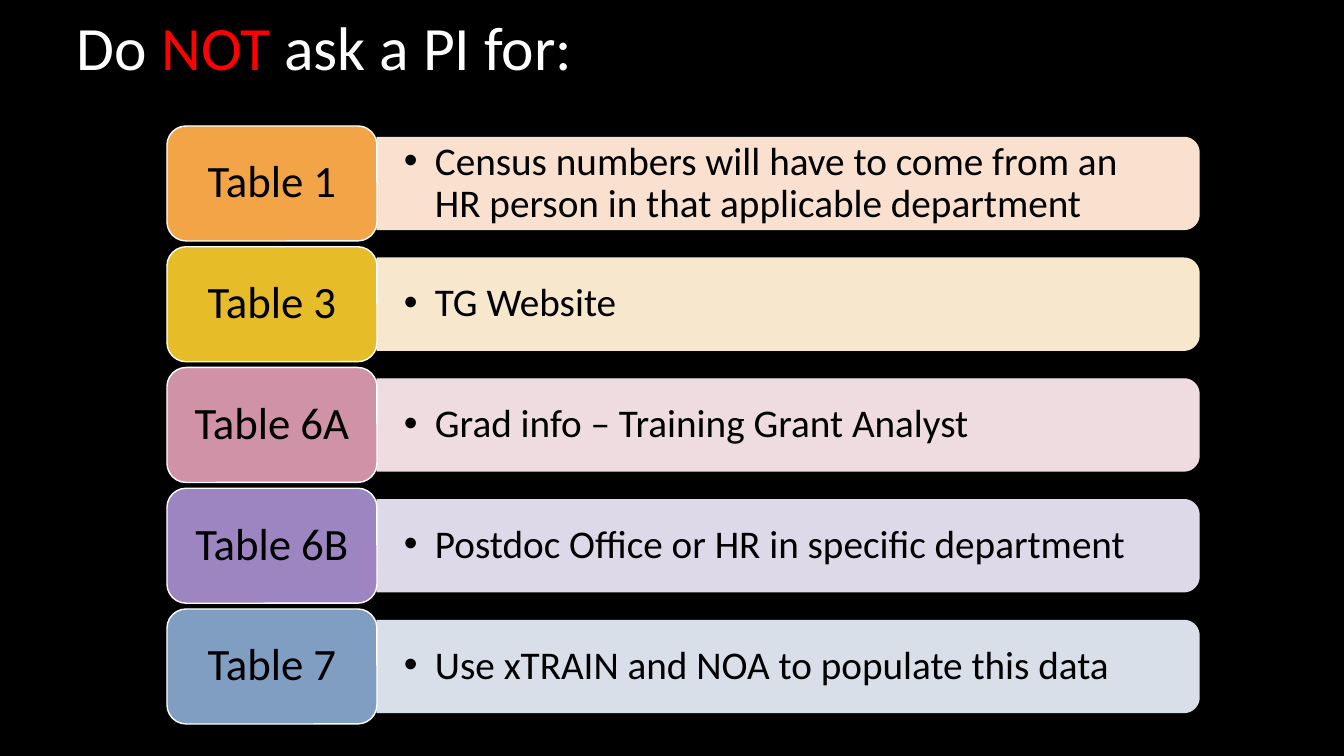
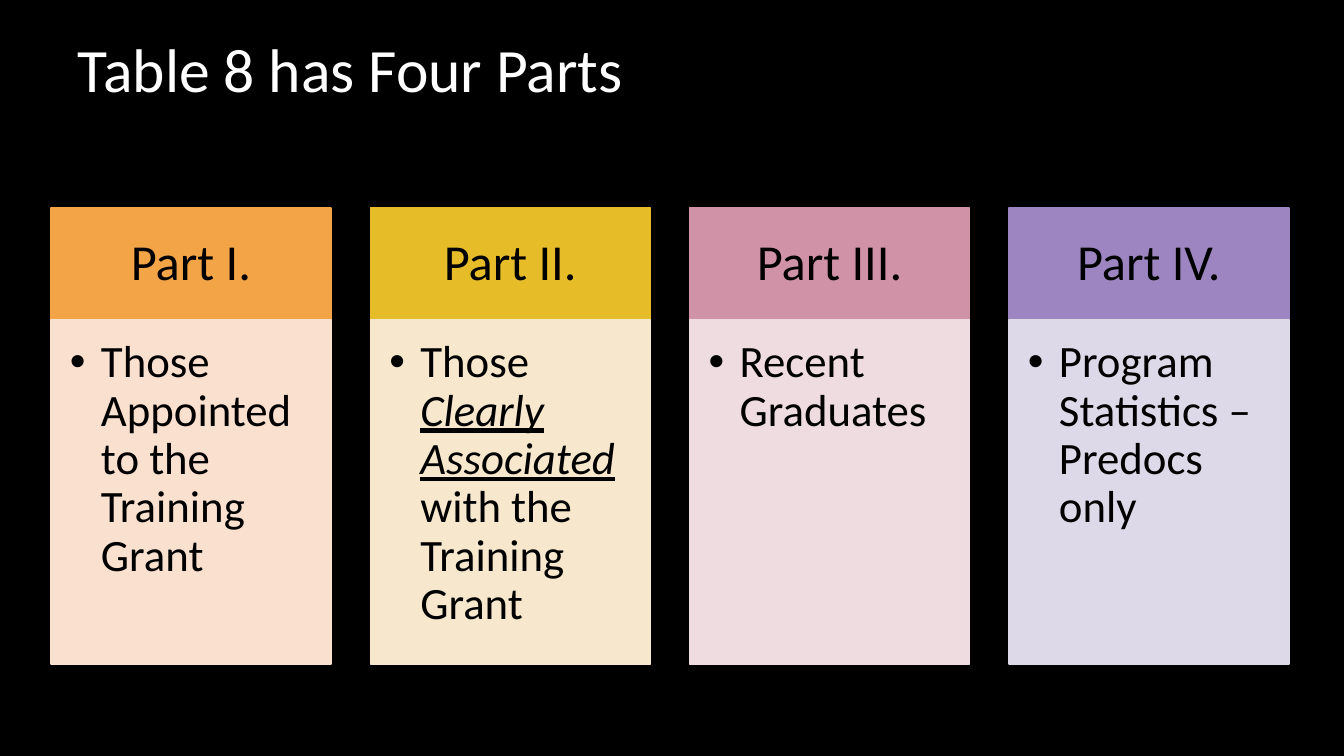
"""Build two training grant slides: tables not to ask a PI for, and the parts of Table 8."""
import math

from lxml import etree
from pptx import Presentation, util as u
from pptx.dml.color import RGBColor
from pptx.enum import shapes, text
from pptx.oxml.ns import qn

PX = 12192000 / 1344
FONT = "Calibri"
BLACK, WHITE, RED = "000000", "FFFFFF", "FF0000"
ACCENTS = [
    ("F3A447", "FAE0CF"),
    ("E7BC29", "F6E7CD"),
    ("D092A7", "EEDCE1"),
    ("9C85C0", "DED9E8"),
    ("809EC2", "D8DFE9"),
]

AVOID_TITLE = [("Do ", {}), ("NOT", {"color": RED}), (" ask a PI for:", {})]
SOURCES = [
    ("Table 1", "Census numbers will have to come from an HR person in that applicable department"),
    ("Table 3", "TG Website"),
    ("Table 6A", "Grad info – Training Grant Analyst"),
    ("Table 6B", "Postdoc Office or HR in specific department"),
    ("Table 7", "Use xTRAIN and NOA to populate this data"),
]
PARTS_TITLE = [("Table 8 has Four Parts", {})]
PARTS = [
    ("Part I.", [("Those Appointed to the Training Grant", {})]),
    ("Part II.", [("Those ", {}),
                  ("Clearly Associated", {"italic": True, "underline": True}),
                  (" with the Training Grant", {})]),
    ("Part III.", [("Recent Graduates", {})]),
    ("Part IV.", [("Program Statistics – Predocs only", {})]),
]

TITLE = {"size": 44, "color": WHITE, "insets": (10, 5, 10, 5)}
LABEL = {"size": 32, "insets": (19, 12, 19, 12), "align": text.PP_ALIGN.CENTER}
PANEL = {"size": 28, "insets": (27, 18, 32, 18), "bullet": True}
HEADING = {"size": 36, "insets": (28, 16, 28, 16), "align": text.PP_ALIGN.CENTER}
DETAIL = {"size": 32, "insets": (19, 19, 25, 28), "bullet": True,
          "anchor": text.MSO_ANCHOR.TOP}


def px(length):
    return u.Emu(round(length * PX))


def rgb(value):
    return RGBColor.from_string(value)


def add_bullet(paragraph):
    props = paragraph._p.get_or_add_pPr()
    props.set("marL", str(px(31)))
    props.set("indent", str(-px(31)))
    etree.SubElement(props, qn("a:buFont"), typeface="Arial")
    etree.SubElement(props, qn("a:buChar"), char="•")


def write(shape, runs, size, insets, color=BLACK, align=text.PP_ALIGN.LEFT,
          anchor=text.MSO_ANCHOR.MIDDLE, bullet=False):
    frame = shape.text_frame
    frame.word_wrap = True
    frame.vertical_anchor = anchor
    for side, inset in zip(("left", "top", "right", "bottom"), insets):
        setattr(frame, f"margin_{side}", px(inset))
    paragraph = frame.paragraphs[0]
    if bullet:
        add_bullet(paragraph)
    paragraph.alignment = align
    paragraph.line_spacing = 0.9
    for words, changes in runs:
        run = paragraph.add_run()
        run.text = words
        style = {"name": FONT, "size": u.Pt(size), **changes}
        run.font.color.rgb = rgb(style.pop("color", color))
        for key, value in style.items():
            setattr(run.font, key, value)


def paint(shape, fill, line):
    shape.shadow.inherit = False
    shape.fill.solid()
    shape.fill.fore_color.rgb = rgb(fill)
    shape.line.color.rgb = rgb(line)
    shape.line.width = u.Pt(1)
    return shape


def add_block(slide, kind, box, fill, line):
    return paint(slide.shapes.add_shape(kind, *map(px, box)), fill, line)


def add_right_rounded(slide, box, radius, fill):
    left, top, width, height = box
    right, bottom = left + width, top + height
    corners = [(top + radius, -90), (bottom - radius, 0)]
    arcs = [(right - radius + radius * math.cos(math.radians(start + turn)),
             center + radius * math.sin(math.radians(start + turn)))
            for center, start in corners for turn in range(0, 91, 10)]
    outline = slide.shapes.build_freeform(px(left), px(top))
    outline.add_line_segments([(px(x), px(y)) for x, y in arcs + [(left, bottom)]])
    return paint(outline.convert_to_shape(), fill, fill)


def add_slide(deck, title, box):
    slide = deck.slides.add_slide(deck.slide_layouts[6])
    write(slide.shapes.add_textbox(*map(px, box)), title, **TITLE)
    return slide


def build_sources(deck):
    slide = add_slide(deck, AVOID_TITLE, (67, 5, 1210, 92))
    left, first, last, width, height = 167, 126, 609, 210, 115
    panel_height = 92
    step = (last - first) / (len(SOURCES) - 1)
    for row, ((label, source), (strong, pale)) in enumerate(zip(SOURCES, ACCENTS)):
        top = first + row * step
        panel_box = (left + width, top + (height - panel_height) / 2, 822, panel_height)
        panel = add_right_rounded(slide, panel_box, 15, pale)
        write(panel, [(source, {})], **PANEL)
        tab = add_block(slide, shapes.MSO_SHAPE.ROUNDED_RECTANGLE,
                        (left, top, width, height), strong, WHITE)
        write(tab, [(label, {})], **LABEL)


def build_parts(deck):
    slide = add_slide(deck, PARTS_TITLE, (68, 30, 1241, 85))
    first, last, width = 51, 1009, 280
    top, heading_height, detail_height = 208, 112, 344
    step = (last - first) / (len(PARTS) - 1)
    for column, ((name, detail), (strong, pale)) in enumerate(zip(PARTS, ACCENTS)):
        left = first + column * step
        stack = [
            (top, heading_height, strong, [(name, {})], HEADING),
            (top + heading_height, detail_height, pale, detail, DETAIL),
        ]
        for y, height, fill, runs, style in stack:
            block = add_block(slide, shapes.MSO_SHAPE.RECTANGLE,
                              (left, y, width, height), fill, fill)
            write(block, runs, **style)


def main():
    deck = Presentation()
    deck.slide_width, deck.slide_height = px(1344), px(756)
    backdrop = deck.slide_master.background.fill
    backdrop.solid()
    backdrop.fore_color.rgb = rgb(BLACK)
    build_sources(deck)
    build_parts(deck)
    deck.save("out.pptx")


if __name__ == "__main__":
    main()
